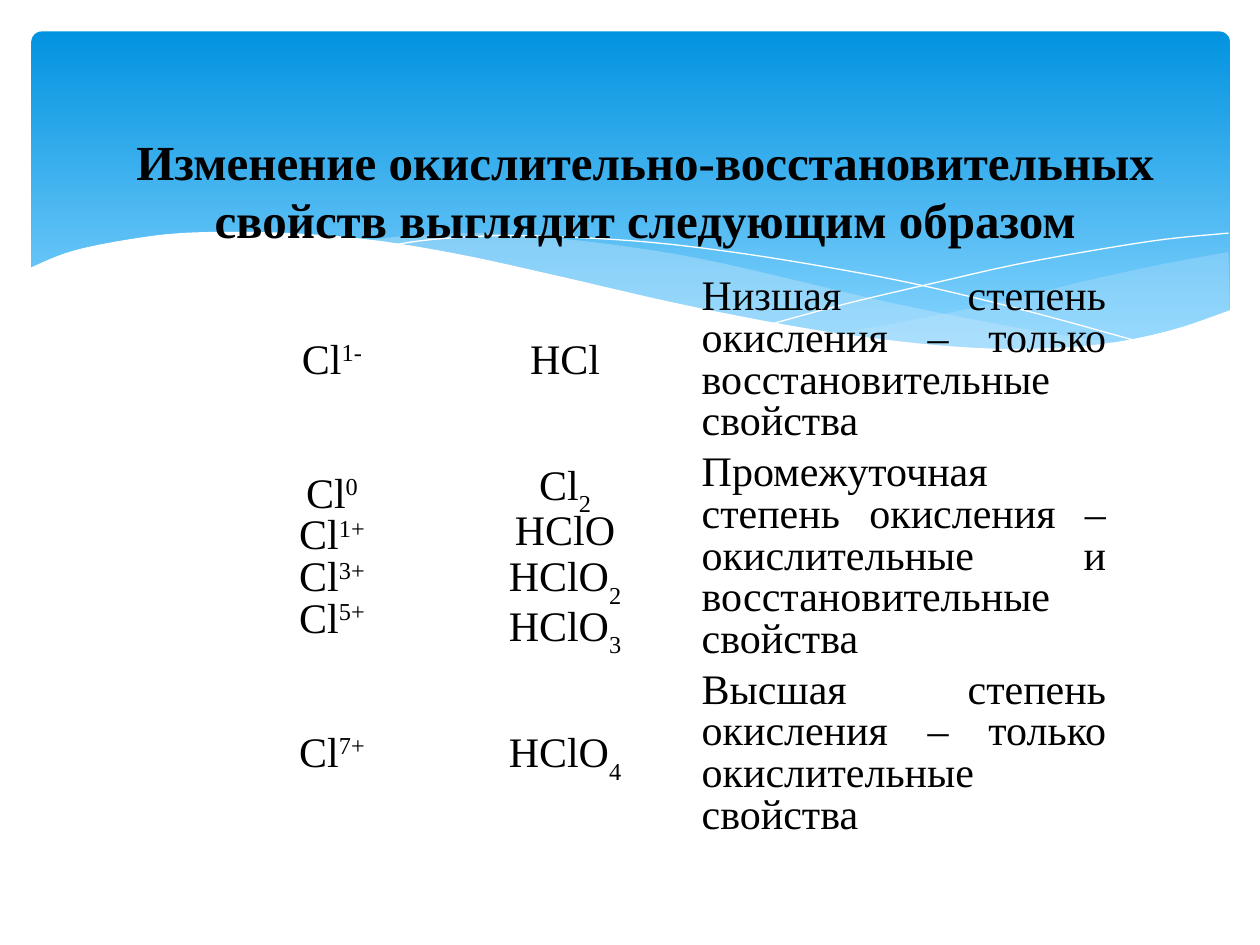
from pptx import Presentation
from pptx.dml.color import RGBColor
from pptx.enum.shapes import MSO_SHAPE
from pptx.enum.text import MSO_ANCHOR, PP_ALIGN
from pptx.oxml.ns import qn
from pptx.util import Pt
from lxml.etree import SubElement

COLORS = {
    "ink": "000000",
    "white": "FFFFFF",
    "sky_top": "0293E0",
    "sky_bottom": "83D3FE",
    "wave": "C6E7FC",
}
FONT = "Times New Roman"
NO_GRID_STYLE = "{2D5ABB26-0587-4C30-8999-92F81FD0307C}"

RIGHT_WAVE = [
    [(702, 144), (663, 151.2), (620, 160.6), (579.6, 170.6), (525, 182.2), (476, 190.8)],
    [(476, 190.8), (507.6, 195.1), (545, 198.7), (586, 200.2), (621.4, 198),
     (657.4, 192.2), (683.3, 185), (702.7, 177.8)],
]
LEFT_WAVE = [
    [(643, 196.6), (602.6, 190.8), (558, 182.9), (508.3, 172.8), (453, 159.8), (409.7, 149.8),
     (370, 142.6), (318.2, 136.1), (273.6, 133.2), (236.2, 134.6), (206, 137.5)],
    [(206, 137.5), (246.2, 143.3), (291, 151.9), (323.3, 159.8), (381.6, 172.8), (432.7, 183.6),
     (478.8, 191.5), (519.8, 197.3), (565.2, 200.2), (603.4, 200.2), (643, 196.6)],
]
FALLING_LINE = [
    [(222.5, 140.4), (247.7, 136.8), (288.7, 134.6), (337.7, 136.1), (383.8, 139.7),
     (437.8, 146.9), (500.4, 157.7), (547.2, 167.8), (598.3, 180.7), (653, 195.8)],
]
RISING_LINE = [
    [(441.4, 185), (483.8, 173.5), (538.6, 160.6), (580.3, 151.2), (623.5, 143.3),
     (665.3, 136.8), (702, 133.2)],
]
WHITE_WAVE = [
    [(703.4, 177.1), (669.6, 188.6), (630, 196.6), (582.5, 199.4), (535.7, 197.3), (481, 190.8),
     (434.2, 182.9), (381, 172.1), (321.8, 158.4), (262.8, 145.4), (210.2, 136.8),
     (165.6, 133.2), (127.4, 132.5), (95, 133.9), (61.2, 139), (37.4, 144.7), (16.6, 153.4)],
    [(16.6, 236.9), (703.4, 236.9)],
]

TITLE = "Изменение окислительно-восстановительных свойств выглядит следующим образом"
COLUMN_WIDTHS = [124.6, 141.8, 245.5]
COLUMN_STYLES = [
    (PP_ALIGN.CENTER, 30000, 2.2),
    (PP_ALIGN.CENTER, -30000, 2.2),
    (PP_ALIGN.JUSTIFY, 0, 1.4),
]
ROW_HEIGHTS = [62.6, 92.9, 48.2]
OXIDATION_ROWS = [
    [[("Cl", "1-")], [("HCl",)],
     [("Низшая степень окисления – только восстановительные свойства",)]],
    [[("Cl", "0"), ("Cl", "1+"), ("Cl", "3+"), ("Cl", "5+")],
     [("Cl", "2"), ("HClO",), ("HClO", "2"), ("HClO", "3")],
     [("Промежуточная степень окисления – окислительные и восстановительные свойства",)]],
    [[("Cl", "7+")], [("HClO", "4")],
     [("Высшая степень окисления – только окислительные свойства",)]],
]


def smooth(knots, steps=6):
    padded = [knots[0], *knots, knots[-1]]
    points = [knots[0]]
    for a, b, c, d in zip(padded, padded[1:], padded[2:], padded[3:]):
        for step in range(1, steps + 1):
            t = step / steps
            points.append(tuple(
                (2 * q + (r - p) * t + (2 * p - 5 * q + 4 * r - s) * t ** 2
                 + (3 * q - p - 3 * r + s) * t ** 3) / 2
                for p, q, r, s in zip(a, b, c, d)))
    return points


class SlideWriter:
    def __init__(self, deck, font):
        self.page = deck.slides.add_slide(deck.slide_layouts[5])
        self.font = font

    def color(self, name):
        return RGBColor.from_string(COLORS[name])

    def span(self, para, text, size, bold=False, baseline=0):
        span = para.add_run()
        span.text = text
        span.font.name = self.font
        span.font.size = Pt(size)
        span.font.bold = bold
        span.font.color.rgb = self.color("ink")
        if baseline:
            span._r.get_or_add_rPr().set("baseline", str(baseline))

    def sky(self, left, top, width, height):
        panel = self.page.shapes.add_shape(
            MSO_SHAPE.ROUNDED_RECTANGLE, Pt(left), Pt(top), Pt(width), Pt(height))
        panel.adjustments[0] = 0.03
        panel.shadow.inherit = False
        panel.line.fill.background()
        panel.fill.gradient()
        panel.fill.gradient_angle = 270
        stops = panel.fill.gradient_stops
        for stop, name, position in zip(stops, ("sky_top", "sky_bottom"), (0, 0.9)):
            stop.color.rgb = self.color(name)
            stop.position = position

    def outline(self, curves, closed):
        points = [(Pt(x), Pt(y)) for knots in curves
                  for x, y in (smooth(knots) if len(knots) > 2 else knots)]
        builder = self.page.shapes.build_freeform(*points[0])
        builder.add_line_segments(points[1:], close=closed)
        shape = builder.convert_to_shape()
        shape.shadow.inherit = False
        return shape

    def wave(self, curves, name, opacity=100):
        shape = self.outline(curves, True)
        shape.line.fill.background()
        shape.fill.solid()
        shape.fill.fore_color.rgb = self.color(name)
        if opacity < 100:
            tint = shape.fill._xPr.find(qn("a:solidFill"))[0]
            SubElement(tint, qn("a:alpha")).set("val", str(opacity * 1000))

    def hairline(self, curves):
        shape = self.outline(curves, False)
        shape.fill.background()
        shape.line.color.rgb = self.color("white")
        shape.line.width = Pt(0)

    def table(self, left, top, height):
        frame = self.page.shapes.add_table(
            len(ROW_HEIGHTS), len(COLUMN_WIDTHS), Pt(left), Pt(top),
            Pt(sum(COLUMN_WIDTHS)), Pt(height))
        table = frame.table
        table.first_row = table.horz_banding = False
        table._tbl.tblPr.find(qn("a:tableStyleId")).text = NO_GRID_STYLE
        for column, width in zip(table.columns, COLUMN_WIDTHS):
            column.width = Pt(width)
        for row, row_height, entries in zip(table.rows, ROW_HEIGHTS, OXIDATION_ROWS):
            row.height = Pt(row_height)
            for cell, lines, style in zip(row.cells, entries, COLUMN_STYLES):
                self.cell(cell, lines, *style)
        frame.height = Pt(height)

    def cell(self, cell, lines, align, baseline, margin_top):
        cell.fill.background()
        cell.vertical_anchor = MSO_ANCHOR.MIDDLE
        cell.margin_left = cell.margin_right = Pt(7.2)
        cell.margin_top, cell.margin_bottom = Pt(margin_top), Pt(3.6)
        for index, parts in enumerate(lines):
            frame = cell.text_frame
            para = frame.add_paragraph() if index else frame.paragraphs[0]
            para.alignment = align
            para.line_spacing = 0.9
            for part, shift in zip(parts, (0, baseline)):
                self.span(para, part, 24, baseline=shift)

    def title(self, text, left, top, width, height):
        box = self.page.shapes.title
        box.left, box.top, box.width, box.height = Pt(left), Pt(top), Pt(width), Pt(height)
        box.text_frame.word_wrap = True
        box.text_frame.vertical_anchor = MSO_ANCHOR.TOP
        para = box.text_frame.paragraphs[0]
        para.alignment = PP_ALIGN.CENTER
        self.span(para, text, 28, bold=True)
        self.page.shapes._spTree.append(box._element)


def main():
    deck = Presentation()
    deck.slide_width, deck.slide_height = Pt(720), Pt(540)
    writer = SlideWriter(deck, FONT)
    writer.sky(18, 18, 684.7, 194.4)
    writer.wave(RIGHT_WAVE, "wave", 29)
    writer.wave(LEFT_WAVE, "wave", 40)
    writer.hairline(FALLING_LINE)
    writer.hairline(RISING_LINE)
    writer.wave(WHITE_WAVE, "white")
    writer.table(127.4, 157, 352.8)
    writer.title(TITLE, 42.5, 71.3, 652.3, 74.9)
    deck.save("out.pptx")


if __name__ == "__main__":
    main()
